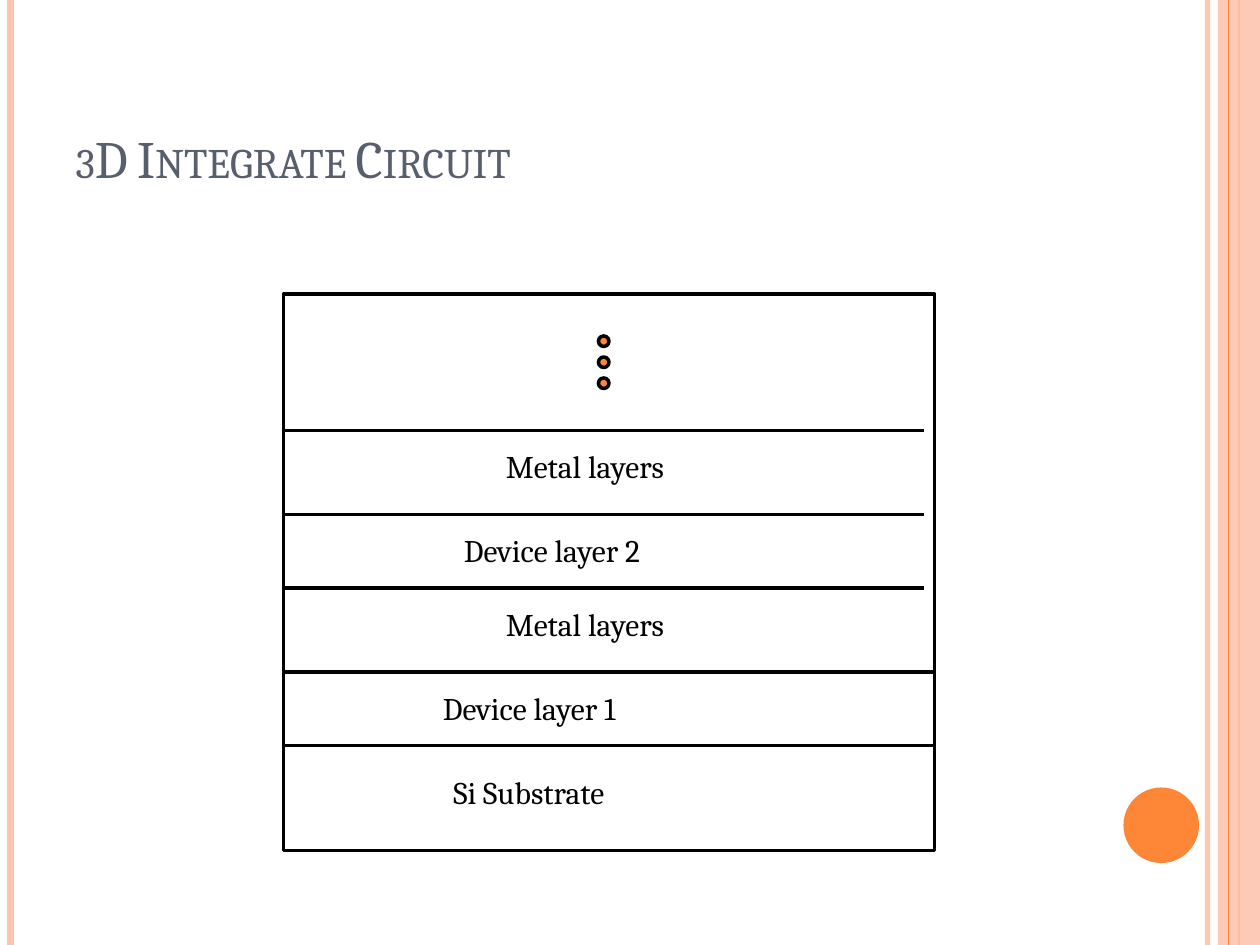
from lxml.etree import SubElement
from pptx import Presentation
from pptx.dml.color import RGBColor
from pptx.enum.shapes import MSO_CONNECTOR, MSO_SHAPE
from pptx.enum.text import MSO_ANCHOR, MSO_AUTO_SIZE, PP_ALIGN
from pptx.oxml.ns import qn
from pptx.util import Pt

COLORS = {"peach": "FEC3AE", "orange": "FE8637", "slate": "575F6D", "black": "000000"}
FONT = "Cambria"
PAGE_WIDTH, PAGE_HEIGHT = 720, 540


def color(name):
    return RGBColor.from_string(COLORS[name])


def set_opacity(fill_parent, percent):
    color_node = fill_parent.find(qn("a:solidFill"))[0]
    SubElement(color_node, qn("a:alpha")).set("val", str(percent * 1000))


def add_line(page, start, end, name, width, opacity=100):
    points = [Pt(value) for value in (*start, *end)]
    line = page.shapes.add_connector(MSO_CONNECTOR.STRAIGHT, *points)
    line.line.color.rgb = color(name)
    line.line.width = Pt(width)
    if opacity < 100:
        set_opacity(line.line._get_or_add_ln(), opacity)
    SubElement(line._element.spPr, qn("a:effectLst"))


def add_figure(page, kind, box, fill=None, outline=None):
    shape = page.shapes.add_shape(kind, *[Pt(value) for value in box])
    shape.shadow.inherit = False
    if fill:
        shape.fill.solid()
        shape.fill.fore_color.rgb = color(fill)
    else:
        shape.fill.background()
    if outline:
        shape.line.color.rgb = color(outline)
        shape.line.width = Pt(2)
    else:
        shape.line.fill.background()
    return shape


def add_text(para, text, size, name):
    span = para.add_run()
    span.text = text
    span.font.name = FONT
    span.font.size = Pt(size)
    span.font.color.rgb = color(name)
    return span


def add_side_bars(page, width, height):
    def bar(x, name, weight, opacity=100):
        add_line(page, (x, 0), (x, height), name, weight, opacity)

    bar(width - 30, "peach", 3, 93)
    bar(6, "peach", 4.5)
    bar(width - 12, "orange", 1.5)
    band = add_figure(page, MSO_SHAPE.RECTANGLE, (width - 24, 0, 24, height), "peach")
    set_opacity(band._element.spPr, 87)
    bar(width - 18, "orange", 0.75)
    add_figure(page, MSO_SHAPE.OVAL, (width - 78, height - 90, 43.2, 43.2), "orange")


def fill_title(page, box, text):
    title = page.shapes.title
    title.left, title.top, title.width, title.height = [Pt(value) for value in box]
    frame = title.text_frame
    frame.word_wrap = True
    frame.auto_size = MSO_AUTO_SIZE.NONE
    frame.vertical_anchor = MSO_ANCHOR.BOTTOM
    para = frame.paragraphs[0]
    para.alignment = PP_ALIGN.LEFT
    span = add_text(para, text, 30, "slate")
    span.font._element.set("cap", "small")


def add_label(page, box, text):
    label = page.shapes.add_textbox(*[Pt(value) for value in box])
    label.text_frame.word_wrap = True
    add_text(label.text_frame.paragraphs[0], text, 18, "black")


def add_layer_stack(page, box):
    left, top, width, height = box
    add_figure(page, MSO_SHAPE.RECTANGLE, box, outline="black")

    # Layers from the bottom: text, line offset, line gap at right,
    # label drop below the line, label offset, label width
    layers = [
        ("Si Substrate", 258, 0, 12, 90, 180),
        ("Device layer 1", 216, 0, 6, 84, 204),
        ("Metal layers", 168, 6, 6, 120, 138),
        ("Device layer 2", 126, 6, 6, 96, 192),
        ("Metal layers", 78, 6, 6, 120, 138),
    ]
    for text, offset, gap, drop, indent, label_width in layers:
        y = top + offset
        add_line(page, (left, y), (left + width - gap, y), "black", 2)
        add_label(page, (left + indent, y + drop, label_width, 36), text)

    # Dots for further layers
    for index in range(3):
        dot = (left + 180, top + 24 + 12 * index, 6, 6)
        add_figure(page, MSO_SHAPE.OVAL, dot, "orange", "black")


def main():
    deck = Presentation()
    deck.slide_width, deck.slide_height = Pt(PAGE_WIDTH), Pt(PAGE_HEIGHT)
    page = deck.slides.add_slide(deck.slide_layouts[5])
    add_side_bars(page, PAGE_WIDTH, PAGE_HEIGHT)
    fill_title(page, (36, 21.6, 588, 90), "3D Integrate Circuit")
    add_layer_stack(page, (162, 168, 372, 318))
    deck.save("out.pptx")


if __name__ == "__main__":
    main()
